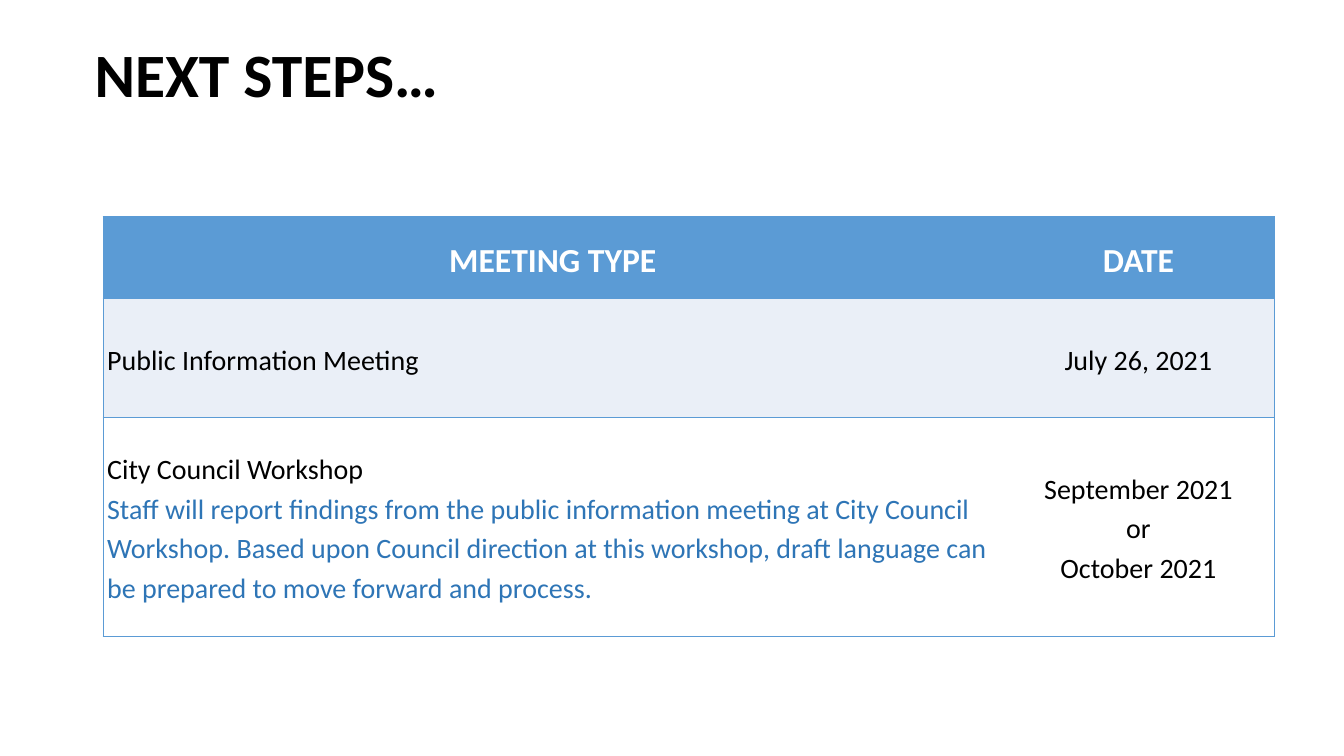
from dataclasses import dataclass

from lxml import etree
from pptx import Presentation
from pptx import util as u
from pptx.dml.color import RGBColor
from pptx.enum import text
from pptx.oxml import ns


@dataclass(frozen=True)
class Theme:
    font: str = "Calibri"
    black: str = "000000"
    white: str = "FFFFFF"
    blue: str = "5B9BD5"
    dark_blue: str = "2E75B6"
    pale: str = "EAEFF7"
    title_size: int = 44
    header_size: int = 24
    body_size: int = 20
    line_spacing: float = 1.15
    border: float = 1


class SlideBuilder:
    def __init__(self, prs, theme):
        self.theme = theme
        self.slide = prs.slides.add_slide(prs.slide_layouts[5])

    def style(self, p, size, color, bold=False):
        p.font.name = self.theme.font
        p.font.size = u.Pt(size)
        p.font.bold = bold
        p.font.color.rgb = RGBColor.from_string(color)

    def title(self, words, left, top, width, height):
        sp = self.slide.shapes.title
        sp.left, sp.top, sp.width, sp.height = map(u.Cm, (left, top, width, height))
        tf = sp.text_frame
        tf.text = words
        tf.word_wrap = True
        tf.vertical_anchor = text.MSO_ANCHOR.MIDDLE
        p = tf.paragraphs[0]
        p.alignment = text.PP_ALIGN.LEFT
        self.style(p, self.theme.title_size, self.theme.black, bold=True)

    def borders(self, cell, visible):
        """Draw the visible sides (letters of LRTB) and clear the others."""
        tc_pr = cell._tc.get_or_add_tcPr()
        for side in "LRTB":
            ln = etree.SubElement(tc_pr, ns.qn(f"a:ln{side}"))
            if side in visible:
                ln.set("w", str(u.Pt(self.theme.border)))
                fill = etree.SubElement(ln, ns.qn("a:solidFill"))
                etree.SubElement(fill, ns.qn("a:srgbClr"), val=self.theme.blue)
            else:
                etree.SubElement(ln, ns.qn("a:noFill"))

    def cell(self, cell, lines, size, fill, align, bold=False):
        cell.fill.solid()
        cell.fill.fore_color.rgb = RGBColor.from_string(fill)
        cell.vertical_anchor = text.MSO_ANCHOR.MIDDLE
        cell.margin_left = cell.margin_right = u.Cm(0.1)
        cell.margin_top = cell.margin_bottom = u.Cm(0.2)
        tf = cell.text_frame
        tf.text = "\n".join(words for words, _ in lines)
        for p, (_, color) in zip(tf.paragraphs, lines):
            p.alignment = align
            p.line_spacing = self.theme.line_spacing
            self.style(p, size, color, bold)

    def table(self, rows, left, top, widths, heights, fills):
        t = self.theme
        table = self.slide.shapes.add_table(
            len(rows), len(widths), u.Cm(left), u.Cm(top),
            u.Cm(sum(widths)), u.Cm(sum(heights))).table
        table.first_row = table.horz_banding = False
        for column, width in zip(table.columns, widths):
            column.width = u.Cm(width)
        for r, (row, height, fill) in enumerate(zip(rows, heights, fills)):
            table.rows[r].height = u.Cm(height)
            header = r == 0
            for c, lines in enumerate(row):
                cell = table.cell(r, c)
                self.borders(cell, "LTB" if c == 0 else "RTB")
                centred = header or c > 0
                self.cell(cell, lines, t.header_size if header else t.body_size, fill,
                          text.PP_ALIGN.CENTER if centred else text.PP_ALIGN.LEFT,
                          bold=header)


def main():
    theme = Theme()
    prs = Presentation()
    prs.slide_width, prs.slide_height = u.Cm(33.87), u.Cm(19.05)
    page = SlideBuilder(prs, theme)

    # Heading
    page.title("NEXT STEPS…", 2.13, 0.76, 11.2, 2.13)

    # Meeting schedule
    black, white = theme.black, theme.white
    meetings = [
        [[("MEETING TYPE", white)], [("DATE", white)]],
        [[("Public Information Meeting", black)], [("July 26, 2021", black)]],
        [[("City Council Workshop", black),
          ("Staff will report findings from the public information meeting at "
           "City Council Workshop. Based upon Council direction at this workshop, "
           "draft language can be prepared to move forward and process.",
           theme.dark_blue)],
         [("September 2021", black), ("or", black), ("October 2021", black)]],
    ]
    page.table(meetings, 2.6, 5.46, widths=(22.66, 6.86), heights=(2.06, 3, 5.51),
               fills=(theme.blue, theme.pale, white))

    prs.save("out.pptx")


if __name__ == "__main__":
    main()
